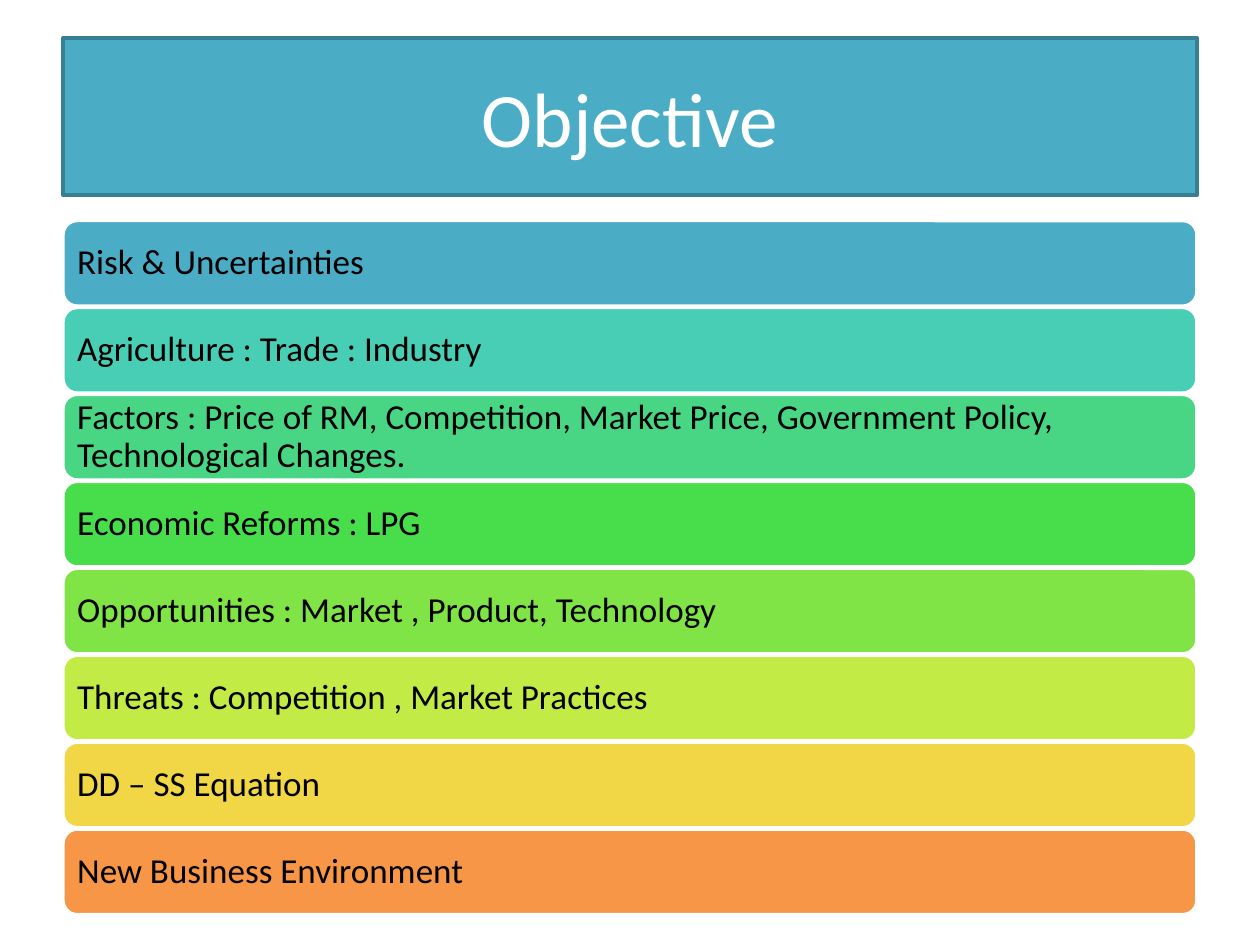
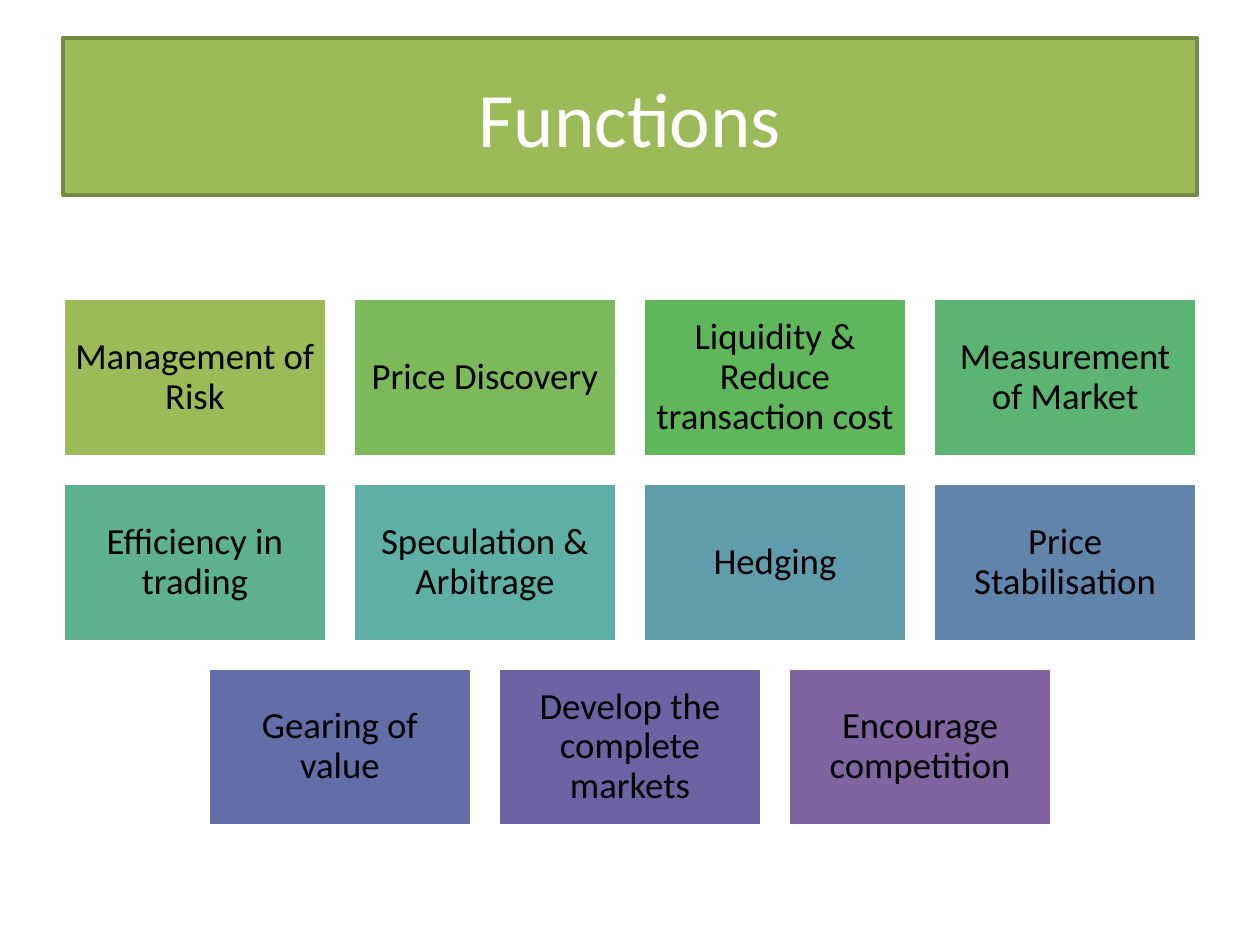
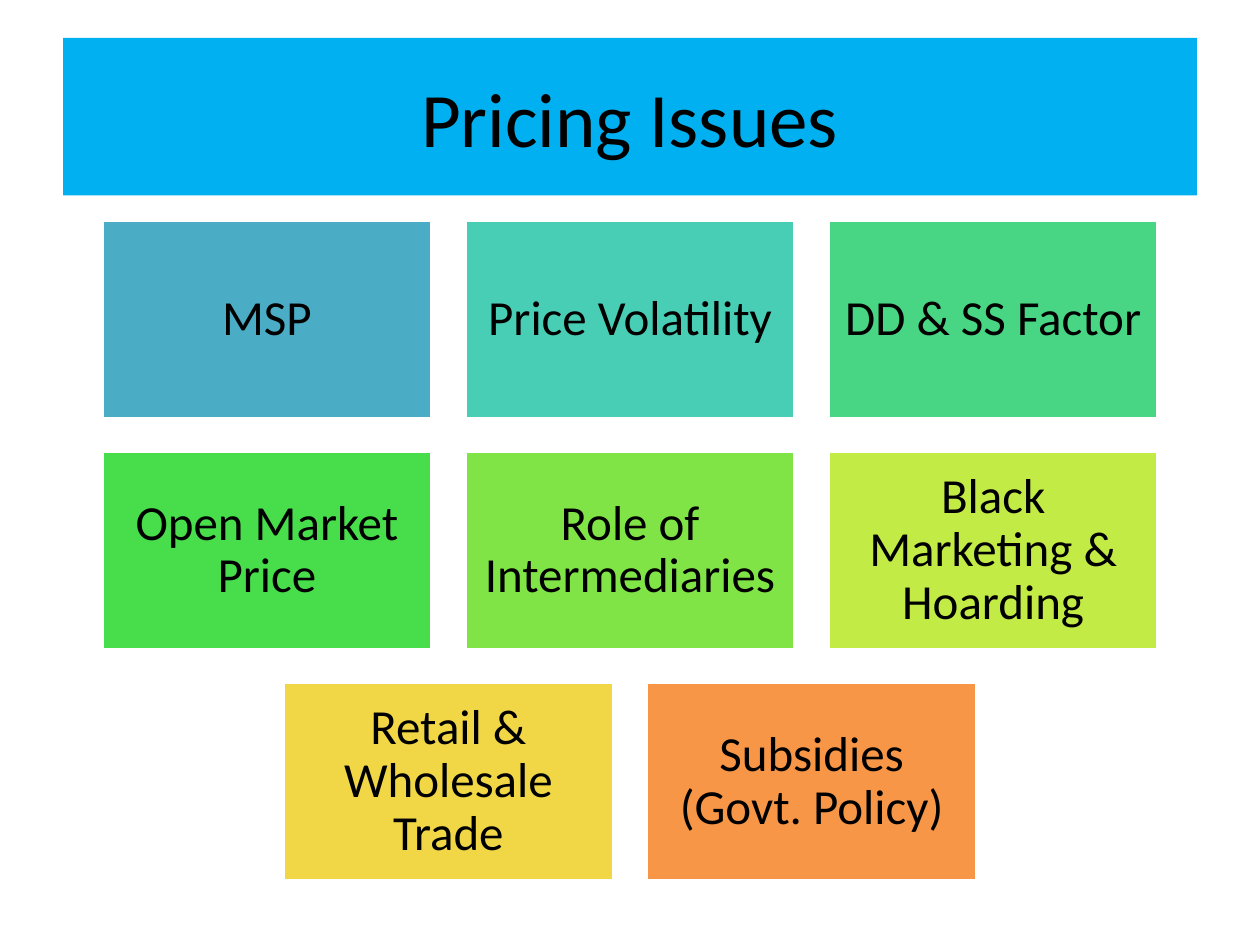
from pptx import Presentation
from pptx.dml.color import RGBColor
from pptx.enum.shapes import MSO_SHAPE
from pptx.enum.text import MSO_ANCHOR, PP_ALIGN
from pptx.util import Inches, Pt

FONT = "Calibri"
WHITE, BLACK = "FFFFFF", "000000"
SPECTRUM = ["4BACC6", "49CEB6", "48D684", "47DD4B",
            "80E446", "C3EB46", "F1D746", "F79646"]
GREEN_TO_PURPLE = ["9BBB59", "7CB95A", "5FB65B", "5CB473", "5DB18E", "5EAFA6",
                   "5F9DAC", "6084AA", "626EA7", "6C63A5", "8064A2"]
SLIDE_W, SLIDE_H = 10, 7.5
MARGIN = 0.05 * SLIDE_W
CONTENT_W = SLIDE_W - 2 * MARGIN
CONTENT_TOP = 1.75
TILE_GAP = 0.1      # share of the tile width
TILE_RATIO = 0.6    # tile height to width


def paint(shape, fill, line):
    shape.fill.solid()
    shape.fill.fore_color.rgb = RGBColor.from_string(fill)
    if line:
        shape.line.color.rgb = RGBColor.from_string(line)
        shape.line.width = Pt(2)
    else:
        shape.line.fill.background()


def write(shape, text, size, color, align):
    tf = shape.text_frame
    tf.text = text
    tf.word_wrap = True
    tf.vertical_anchor = MSO_ANCHOR.MIDDLE
    p = tf.paragraphs[0]
    p.alignment = align
    p.font.name = FONT
    p.font.size = Pt(size)
    p.font.color.rgb = RGBColor.from_string(color)
    return tf, p


four_wide = CONTENT_W / (4 + 3 * TILE_GAP)
three_wide = 2.62

slides = [
    dict(title="Objective", band=("4BACC6", "377F92"), title_color=WHITE,
         kind=MSO_SHAPE.ROUNDED_RECTANGLE, align=PP_ALIGN.LEFT,
         cols=1, top=CONTENT_TOP, tile=(CONTENT_W, 0.68), gap=0.01,
         size=20, inset=0.08, colors=SPECTRUM,
         items=["Risk & Uncertainties",
                "Agriculture : Trade : Industry",
                "Factors : Price of RM, Competition, Market Price, "
                "Government Policy, Technological Changes.",
                "Economic Reforms : LPG",
                "Opportunities : Market , Product, Technology",
                "Threats : Competition , Market Practices",
                "DD – SS Equation",
                "New Business Environment"]),
    dict(title="Functions", band=("9BBB59", "738A42"), title_color=WHITE,
         kind=MSO_SHAPE.RECTANGLE, align=PP_ALIGN.CENTER,
         cols=4, top=2.37, tile=(four_wide, four_wide * TILE_RATIO),
         gap=four_wide * TILE_GAP, size=21, inset=0.09, colors=GREEN_TO_PURPLE,
         items=["Management of Risk", "Price Discovery",
                "Liquidity & Reduce transaction cost", "Measurement of Market",
                "Efficiency in trading", "Speculation & Arbitrage",
                "Hedging", "Price Stabilisation",
                "Gearing of value", "Develop the complete markets",
                "Encourage competition"]),
    dict(title="Pricing Issues", band=("00B0F0", None), title_color=BLACK,
         kind=MSO_SHAPE.RECTANGLE, align=PP_ALIGN.CENTER,
         cols=3, top=CONTENT_TOP, tile=(three_wide, three_wide * TILE_RATIO),
         gap=three_wide * TILE_GAP, size=28, inset=0.12, colors=SPECTRUM,
         items=["MSP", "Price Volatility", "DD & SS Factor",
                "Open Market Price", "Role of Intermediaries",
                "Black Marketing & Hoarding",
                "Retail & Wholesale Trade", "Subsidies\v(Govt. Policy)"]),
]

prs = Presentation()
prs.slide_width, prs.slide_height = Inches(SLIDE_W), Inches(SLIDE_H)

for spec_ in slides:
    s = prs.slides.add_slide(prs.slide_layouts[5])
    title = s.shapes.title
    title.left, title.top = Inches(MARGIN), Inches(0.04 * SLIDE_H)
    title.width, title.height = Inches(CONTENT_W), Inches(SLIDE_H / 6)
    paint(title, *spec_["band"])
    write(title, spec_["title"], 44, spec_["title_color"], PP_ALIGN.CENTER)

    w, h = spec_["tile"]
    gap, cols, items = spec_["gap"], spec_["cols"], spec_["items"]
    for i, (text, color) in enumerate(zip(items, spec_["colors"])):
        row, col = divmod(i, cols)
        in_row = min(cols, len(items) - row * cols)
        row_left = (SLIDE_W - in_row * w - (in_row - 1) * gap) / 2
        sp = s.shapes.add_shape(
            spec_["kind"], Inches(row_left + col * (w + gap)),
            Inches(spec_["top"] + row * (h + gap)), Inches(w), Inches(h))
        sp.shadow.inherit = False
        paint(sp, color, WHITE)
        tf, p = write(sp, text, spec_["size"], BLACK, spec_["align"])
        p.line_spacing = 0.9
        tf.margin_left = tf.margin_right = Inches(spec_["inset"])
        tf.margin_top = tf.margin_bottom = Inches(spec_["inset"])

prs.save("out.pptx")
